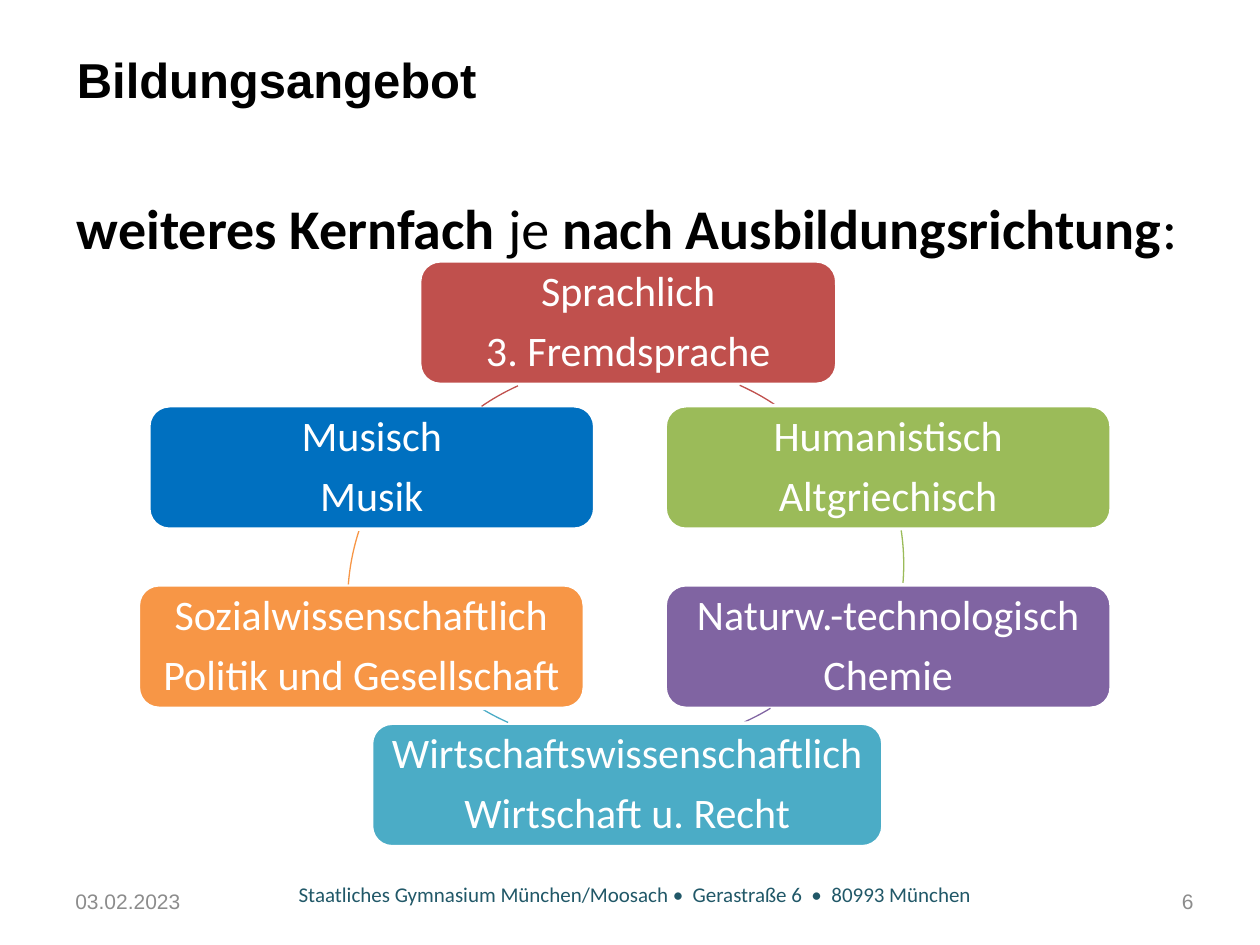
"""Build the slide on the core subjects of each school branch."""
from pptx import Presentation
from pptx.dml.color import RGBColor
from pptx.enum.shapes import MSO_SHAPE as Preset
from pptx.enum.text import MSO_ANCHOR as Anchor, PP_ALIGN as Align
from pptx.util import Cm, Pt

NODE_HEIGHT = 2.49
CIRCLE = 9.3
BRANCHES = [
    (5.67, 0, 8.41, "C0504D", ["Sprachlich", "3. Fremdsprache"]),
    (10.62, 2.92, 8.99, "9BBB59", ["Humanistisch", "Altgriechisch"]),
    (10.62, 6.53, 8.99, "8064A2", ["Naturw.-technologisch", "Chemie"]),
    (4.7, 9.32, 10.31, "4BACC6", ["Wirtschaftswissenschaftlich", "Wirtschaft u. Recht"]),
    (0, 6.53, 8.99, "F79646", ["Sozialwissenschaftlich", "Politik und Gesellschaft"]),
    (0.21, 2.92, 8.99, "0070C0", ["Musisch", "Musik"]),
]
ARCS = [
    (5.59, 2.11, 293.9, 304.3, "C0504D"),
    (6.13, 1.47, 351.5, 5, "9BBB59"),
    (5.67, 0.4, 58.6, 65.9, "8064A2"),
    (4.68, 0.4, 113.8, 121.2, "4BACC6"),
    (4.22, 2.23, 184.4, 198.1, "F79646"),
    (4.91, 2.11, 235.4, 245.8, "C0504D"),
]


def color(value):
    """Turn a hex string into a colour."""
    return RGBColor.from_string(value)


def apply(target, formats):
    """Set every attribute in the dict of format values."""
    for name, value in formats.items():
        setattr(target, name, value)


def add_run(paragraph, text, hex_color, **formats):
    """Add a formatted run to a paragraph."""
    run = paragraph.add_run()
    run.text = text
    apply(run.font, formats)
    run.font.color.rgb = color(hex_color)


def add_text(slide, box, runs, hex_color, anchor=Anchor.MIDDLE, align=Align.LEFT,
             line_spacing=1.0, **formats):
    """Add a one-paragraph text box of (text, bold) runs."""
    frame = slide.shapes.add_textbox(*map(Cm, box)).text_frame
    apply(frame, {"word_wrap": True, "vertical_anchor": anchor})
    paragraph = frame.paragraphs[0]
    apply(paragraph, {"alignment": align, "line_spacing": line_spacing})
    for text, bold in runs:
        add_run(paragraph, text, hex_color, bold=bold, **formats)


def add_branch(slide, box, fill, lines):
    """Add a rounded box with a branch and its core subject."""
    shape = slide.shapes.add_shape(Preset.ROUNDED_RECTANGLE, *map(Cm, box))
    shape.shadow.inherit = False
    shape.fill.solid()
    shape.fill.fore_color.rgb = color(fill)
    shape.line.color.rgb = color("FFFFFF")
    shape.line.width = Pt(2)
    frame = shape.text_frame
    margins = dict.fromkeys(
        ["margin_left", "margin_top", "margin_right", "margin_bottom"], Cm(0.25))
    apply(frame, {"word_wrap": True, "vertical_anchor": Anchor.MIDDLE, **margins})
    for index, text in enumerate(lines):
        paragraph = frame.add_paragraph() if index else frame.paragraphs[0]
        apply(paragraph, {"alignment": Align.CENTER, "line_spacing": 0.9,
                          "space_after": Pt(8.4)})
        add_run(paragraph, text, "FFFFFF", size=Pt(24), name="Calibri")


def add_arc(slide, box, start, end, hex_color):
    """Add a clockwise arc between two angles in degrees."""
    arc = slide.shapes.add_shape(Preset.ARC, *map(Cm, box))
    arc.shadow.inherit = False
    arc.fill.background()
    arc.line.color.rgb = color(hex_color)
    arc.line.width = Pt(0.75)
    for index, angle in enumerate((start, end)):
        arc.adjustments[index] = angle * 0.6


def add_cycle(slide, left, top):
    """Add the ring of branches from the given corner."""
    for branch, arc in zip(BRANCHES, ARCS):
        x, y, width, fill, lines = branch
        add_branch(slide, (left + x, top + y, width, NODE_HEIGHT), fill, lines)
        x, y, start, end, hex_color = arc
        add_arc(slide, (left + x, top + y, CIRCLE, CIRCLE), start, end, hex_color)


def add_heading(slide, left, top, width):
    """Add the title and the lead line below it."""
    add_text(slide, (left, top, width, 1.5), [("Bildungsangebot", True)], "000000",
             line_spacing=0.9, size=Pt(28), name="Arial")
    lead = [("weiteres Kernfach ", True), ("je ", False),
            ("nach Ausbildungsrichtung", True), (":", False)]
    add_text(slide, (left, top + 2.87, width + 0.53, 1.6), lead, "000000",
             anchor=Anchor.TOP, size=Pt(32), name="Calibri")


def add_footer(slide, left, top, width, height):
    """Add the date, the school address and the slide number."""
    side = 2.82
    small = {"size": Pt(12), "name": "Arial"}
    add_text(slide, (left, top, side, height), [("03.02.2023", False)], "8C8C8C", **small)
    address = "Staatliches Gymnasium München/Moosach •  Gerastraße 6  •  80993 München"
    add_text(slide, (left + 3.23, top, 16.61, height), [(address, False)], "215868",
             anchor=Anchor.TOP, align=Align.CENTER, size=Pt(12), name="Calibri")
    add_text(slide, (left + width - side, top, side, height), [("6", False)], "8C8C8C",
             align=Align.RIGHT, **small)


def main():
    """Create and save the presentation."""
    presentation = Presentation()
    apply(presentation, {"slide_width": Cm(25.4), "slide_height": Cm(19.05)})
    slide = presentation.slides.add_slide(presentation.slide_layouts[6])
    add_footer(slide, 1.27, 17.65, 23.04, 1.02)
    add_heading(slide, 1.3, 0.91, 22.86)
    add_cycle(slide, 2.79, 5.26)
    presentation.save("out.pptx")


if __name__ == "__main__":
    main()
